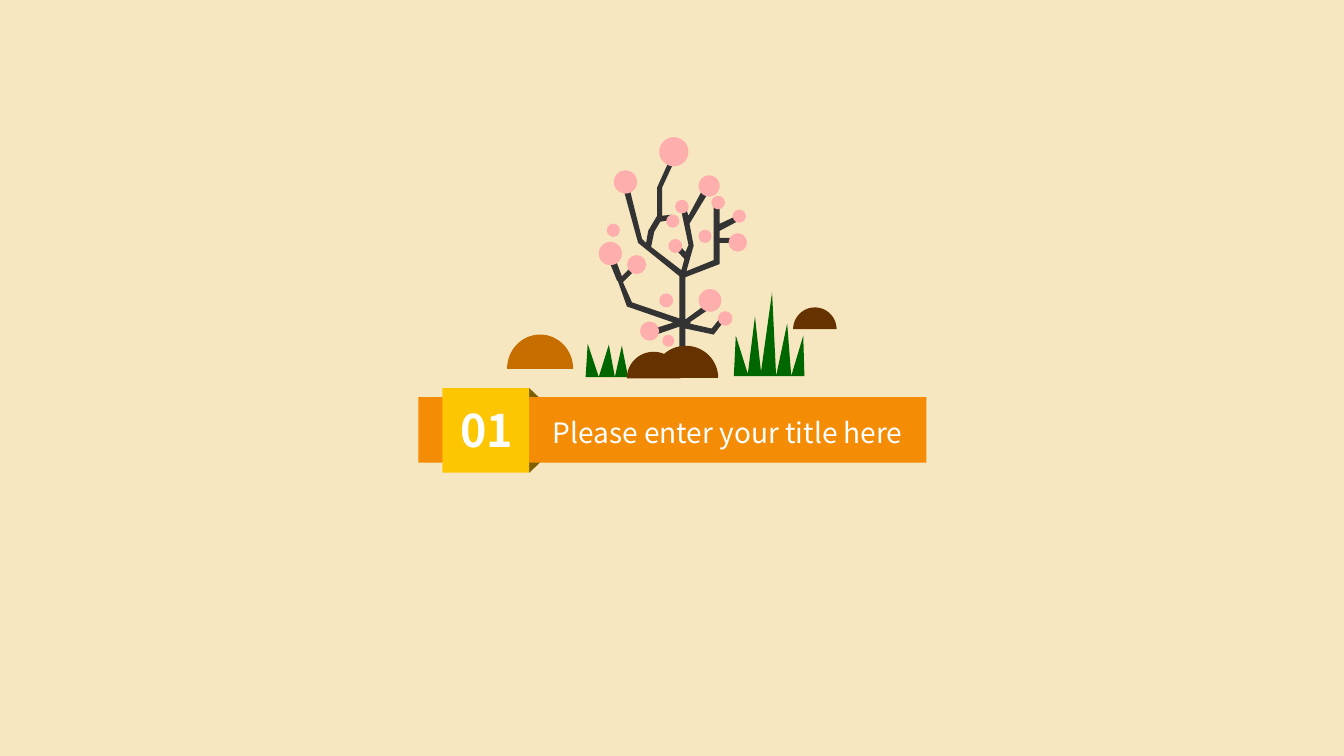
from math import cos, pi, sin

from pptx import Presentation
from pptx.dml.color import RGBColor
from pptx.enum.shapes import MSO_SHAPE
from pptx.enum.text import MSO_ANCHOR, PP_ALIGN
from pptx.util import Pt

NUMBER = "01"
TITLE = "Please enter your title here"

THEME = {
    "font": "Noto Sans CJK SC",
    "number_size": 32,
    "title_size": 20,
    "text": "FFFFFF",
    "background": "F6E7C0",
    "grass": "006600",
    "soil": "663300",
    "clay": "C66E00",
    "bark": "333333",
    "blossom": "FFAEAE",
    "fold": "7F6000",
    "band": "F48C06",
    "tag": "FDC602",
}

SLIDE_SIZE = (960, 540)
BAND = (298.8, 283.7, 362.9, 46.8)
TAG = (316.1, 277.2, 61.9, 60.5)
FOLD_SIZE = (13.7, 13)
NUMBER_BOX = (320.4, 284.4, 54.7, 46.1)
TITLE_BOX = (361, 288.7, 317.5, 39.6)

LEFT_GRASS = [
    (418.3, 269.3), (419.8, 245.5), (427.7, 269.3), (434.9, 246.2),
    (439.2, 269.3), (444.2, 247), (448.6, 269.3),
]
RIGHT_GRASS = [
    (524.2, 268.6), (525.6, 239.8), (534.2, 267.1), (539.3, 226.1),
    (543.6, 265.7), (551.5, 208.8), (554.4, 268.6), (562.3, 231.1),
    (565.2, 268.6), (573.8, 239.8), (574.6, 268.6),
]
BACK_MOUNDS = [
    ((566.6, 219.6, 31, 15.5), "soil"),
    ((362.2, 239, 47.2, 24.5), "clay"),
    ((447.8, 251.3, 38.2, 18.9), "soil"),
]
FRONT_MOUND = (466.6, 247, 46.4, 22.9)

TREE = [
    (514.1, 164.9), (526.3, 158.4), (524.9, 154.8), (514.1, 159.8),
    (514.1, 147.6), (509.8, 147.6), (509.8, 185.8), (490.3, 193.7),
    (495.4, 175.7), (495.4, 175), (492.5, 159.8), (504.7, 139.7),
    (501.1, 136.8), (491.8, 154.1), (488.9, 145.4), (486.7, 148.3),
    (486, 147.6), (491.8, 175), (489.6, 180), (483.8, 173.5),
    (481, 176.4), (488.9, 185), (486.7, 193), (465.1, 176.4),
    (467.3, 165.6), (471.6, 158.4), (480.2, 157), (479.5, 153.4),
    (473, 154.1), (473, 133.9), (481, 116.6), (478.1, 114.5),
    (469.4, 133.9), (469.4, 154.1), (463, 164.9), (461.5, 173.5),
    (458.6, 170.6), (449.3, 133.2), (445, 133.9), (455.8, 173.5),
    (485.3, 197.3), (485.3, 227.5), (451.4, 216), (445, 201.6),
    (453.6, 193), (451.4, 190.1), (444.2, 197.3), (438.5, 182.2),
    (434.2, 184.3), (440.6, 200.2), (441.4, 200.9), (447.8, 218.9),
    (481, 230.4), (467.3, 234.7), (468.7, 239), (485.3, 233.3),
    (485.3, 262.1), (489.6, 262.1), (489.6, 234.7), (509.8, 239),
    (517, 229.7), (514.1, 227.5), (508.3, 234.7), (492.5, 231.1),
    (493.9, 230.4), (492.5, 230.4), (508.3, 219.6), (506.2, 216),
    (489.6, 228.2), (489.6, 198), (514.1, 188.6), (514.1, 173.5),
    (523.4, 173.5), (523.4, 169.9), (514.1, 169.9),
]
BLOSSOMS = [
    (481.3, 108.4, 20.9), (446.8, 130, 16.6), (454.7, 189, 13.7),
    (527, 173.2, 13.2), (518, 227.5, 10.4), (507.2, 214.6, 16.2),
    (464, 236.5, 13.7), (477.4, 243.4, 8.6), (438.1, 164.5, 9.4),
    (528.1, 154.4, 9.4), (480.6, 158, 9.4), (487.1, 147.6, 9.7),
    (482.4, 175.7, 10), (475.9, 214.6, 10), (513, 144.7, 9.7),
    (506.5, 132.8, 15.1), (503.6, 168.8, 9.4), (436, 181.1, 16.6),
]


def paint(shape, colour):
    shape.shadow.inherit = False
    shape.line.fill.background()
    shape.fill.solid()
    shape.fill.fore_color.rgb = RGBColor.from_string(THEME[colour])


def add_outline(slide, points, colour):
    start, *rest = [(Pt(x), Pt(y)) for x, y in points]
    builder = slide.shapes.build_freeform(*start)
    builder.add_line_segments(rest, close=True)
    paint(builder.convert_to_shape(), colour)


def add_mound(slide, box, colour, steps=32):
    left, top, width, height = box
    arc = [
        (left + width / 2 * (1 - cos(pi * i / steps)),
         top + height * (1 - sin(pi * i / steps)))
        for i in range(steps + 1)
    ]
    add_outline(slide, arc, colour)


def add_preset(slide, kind, box, colour):
    shape = slide.shapes.add_shape(kind, *map(Pt, box))
    paint(shape, colour)
    return shape


def write(shape, text, size, bold):
    paragraph = shape.text_frame.paragraphs[0]
    paragraph.text = text
    paragraph.alignment = PP_ALIGN.CENTER
    paragraph.font.name = THEME["font"]
    paragraph.font.size = Pt(THEME[size])
    paragraph.font.bold = bold
    paragraph.font.color.rgb = RGBColor.from_string(THEME["text"])


def draw_scenery(slide):
    add_outline(slide, LEFT_GRASS, "grass")
    for box, colour in BACK_MOUNDS:
        add_mound(slide, box, colour)
    add_outline(slide, TREE, "bark")
    for x, y, size in BLOSSOMS:
        box = (x - size / 2, y - size / 2, size, size)
        add_preset(slide, MSO_SHAPE.OVAL, box, "blossom")
    add_outline(slide, RIGHT_GRASS, "grass")
    add_mound(slide, FRONT_MOUND, "soil")


def draw_banner(slide):
    left, top, width, height = TAG
    fold_tops = (top, top + height - FOLD_SIZE[1])
    for fold_top, flipped in zip(fold_tops, (False, True)):
        box = (left + width, fold_top, *FOLD_SIZE)
        fold = add_preset(slide, MSO_SHAPE.ISOSCELES_TRIANGLE, box, "fold")
        fold.adjustments[0] = 0
        if flipped:
            fold.element.spPr.xfrm.set("flipV", "1")
    add_preset(slide, MSO_SHAPE.RECTANGLE, BAND, "band")
    add_preset(slide, MSO_SHAPE.RECTANGLE, TAG, "tag")

    number = slide.shapes.add_textbox(*map(Pt, NUMBER_BOX))
    number.text_frame.word_wrap = False
    write(number, NUMBER, "number_size", True)

    title = add_preset(slide, MSO_SHAPE.ROUNDED_RECTANGLE, TITLE_BOX, "band")
    title.fill.background()
    title.adjustments[0] = 0.09
    title.text_frame.word_wrap = True
    title.text_frame.vertical_anchor = MSO_ANCHOR.MIDDLE
    write(title, TITLE, "title_size", False)


def main():
    deck = Presentation()
    deck.slide_width, deck.slide_height = map(Pt, SLIDE_SIZE)
    slide = deck.slides.add_slide(deck.slide_layouts[6])
    slide.background.fill.solid()
    slide.background.fill.fore_color.rgb = RGBColor.from_string(THEME["background"])
    draw_scenery(slide)
    draw_banner(slide)
    deck.save("out.pptx")


if __name__ == "__main__":
    main()
